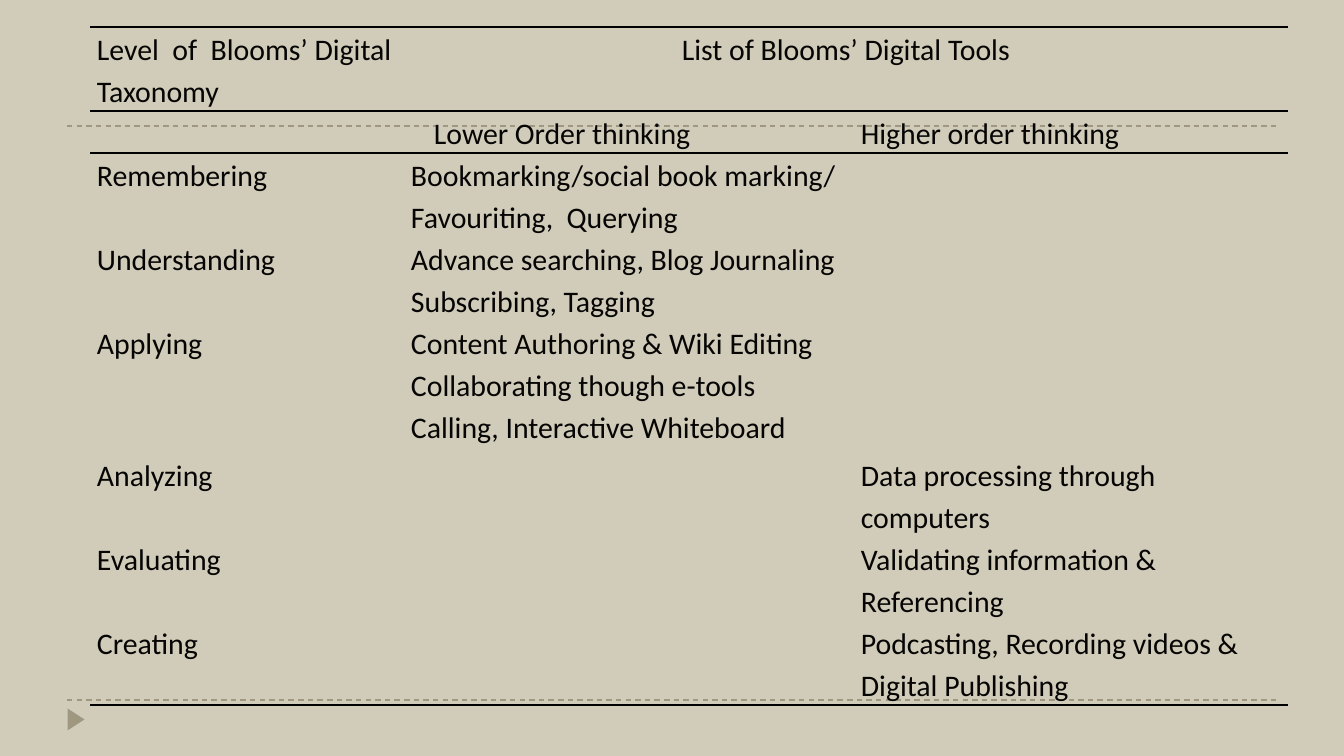
from dataclasses import dataclass

from lxml import etree
from pptx import Presentation
from pptx import util as u
from pptx.dml.color import RGBColor
from pptx.enum import dml, shapes, text
from pptx.oxml import ns

# Each row: height, then cells as (first column, columns spanned, paragraphs)
ROWS = [
    (84, [(0, 1, ["Level  of  Blooms’ Digital Taxonomy"]),
          (1, 3, ["List of Blooms’ Digital Tools"])]),
    (42, [(0, 2, []), (2, 1, ["Lower Order thinking"]),
          (3, 1, ["Higher order thinking"])]),
]
LEVELS = [
    (84, "Remembering",
     ["Bookmarking/social book marking/ Favouriting,  Querying"], []),
    (84, "Understanding",
     ["Advance searching, Blog Journaling", "Subscribing, Tagging"], []),
    (132, "Applying",
     ["Content Authoring & Wiki Editing", "Collaborating though e-tools",
      "Calling, Interactive Whiteboard"], []),
    (84, "Analyzing", [], ["Data processing through computers"]),
    (84, "Evaluating", [], ["Validating information & Referencing"]),
    (84, "Creating", [], ["Podcasting, Recording videos & Digital Publishing"]),
]
ROWS += [(high, [(0, 1, [name]), (1, 2, lower), (3, 1, upper)])
         for high, name, lower, upper in LEVELS]
COLS = [314, 23, 427, 434]
RULED = {0, 1, 2, len(ROWS)}  # row edges that carry a rule
DASHES = [700, 126]


@dataclass(frozen=True)
class Theme:
    back: str = "D0CCB9"
    trim: str = "A09781"
    ink: str = "060504"
    rule: str = "000000"
    font: str = "Calibri"
    size: int = 16


THEME = Theme()


def px(n):
    return u.Emu(round(n * 914400 / 134.4))


def rgb(code):
    return RGBColor.from_string(code)


def trim(slide):
    """Draw the dashed lines and the corner marker."""
    for y in DASHES:
        line = slide.shapes.add_connector(
            shapes.MSO_CONNECTOR.STRAIGHT, px(67), px(y), px(1277), px(y))
        line.line.color.rgb = rgb(THEME.trim)
        line.line.width = u.Pt(0.75)
        line.line.dash_style = dml.MSO_LINE.DASH
        etree.SubElement(line.element.spPr, ns.qn("a:effectLst"))
    mark = slide.shapes.add_shape(
        shapes.MSO_SHAPE.ISOSCELES_TRIANGLE, px(65), px(711), px(22), px(17))
    mark.rotation = 90
    mark.shadow.inherit = False
    mark.fill.solid()
    mark.fill.fore_color.rgb = rgb(THEME.trim)
    mark.line.fill.background()


def edge(cell, row):
    """Rule the ruled edges of a cell and clear its other sides."""
    props = cell._tc.get_or_add_tcPr()
    sides = {"L": False, "R": False, "T": row in RULED, "B": row + 1 in RULED}
    for side, ruled in sides.items():
        line = etree.SubElement(props, ns.qn(f"a:ln{side}"))
        line.set("w", str(u.Pt(1)))
        fill = etree.SubElement(
            line, ns.qn("a:solidFill" if ruled else "a:noFill"))
        if ruled:
            etree.SubElement(fill, ns.qn("a:srgbClr")).set("val", THEME.rule)


def write(cell, lines, align):
    cell.text = "\n".join(lines)
    for para in cell.text_frame.paragraphs:
        para.alignment = align
        para.line_spacing = 1.15
        para.font.size = u.Pt(THEME.size)
        para.font.name = THEME.font
        para.font.color.rgb = rgb(THEME.ink)


def grid(slide):
    table = slide.shapes.add_table(
        len(ROWS), len(COLS), px(90), px(27), px(sum(COLS)),
        px(sum(high for high, _ in ROWS))).table
    table.first_row = table.horz_banding = False
    for col, wide in zip(table.columns, COLS):
        col.width = px(wide)
    for r, (high, cells) in enumerate(ROWS):
        table.rows[r].height = px(high)
        for c in range(len(COLS)):
            cell = table.cell(r, c)
            cell.margin_left = cell.margin_right = px(7)
            cell.margin_top = cell.margin_bottom = 0
            edge(cell, r)
            cell.fill.background()
        for c, span, lines in cells:
            cell = table.cell(r, c)
            if span > 1:
                cell.merge(table.cell(r, c + span - 1))
            align = text.PP_ALIGN.CENTER if span == 3 else text.PP_ALIGN.LEFT
            write(cell, lines, align)


def main():
    deck = Presentation()
    deck.slide_width, deck.slide_height = px(1344), px(756)
    slide = deck.slides.add_slide(deck.slide_layouts[6])
    slide.background.fill.solid()
    slide.background.fill.fore_color.rgb = rgb(THEME.back)
    trim(slide)
    grid(slide)
    deck.save("out.pptx")


if __name__ == "__main__":
    main()
